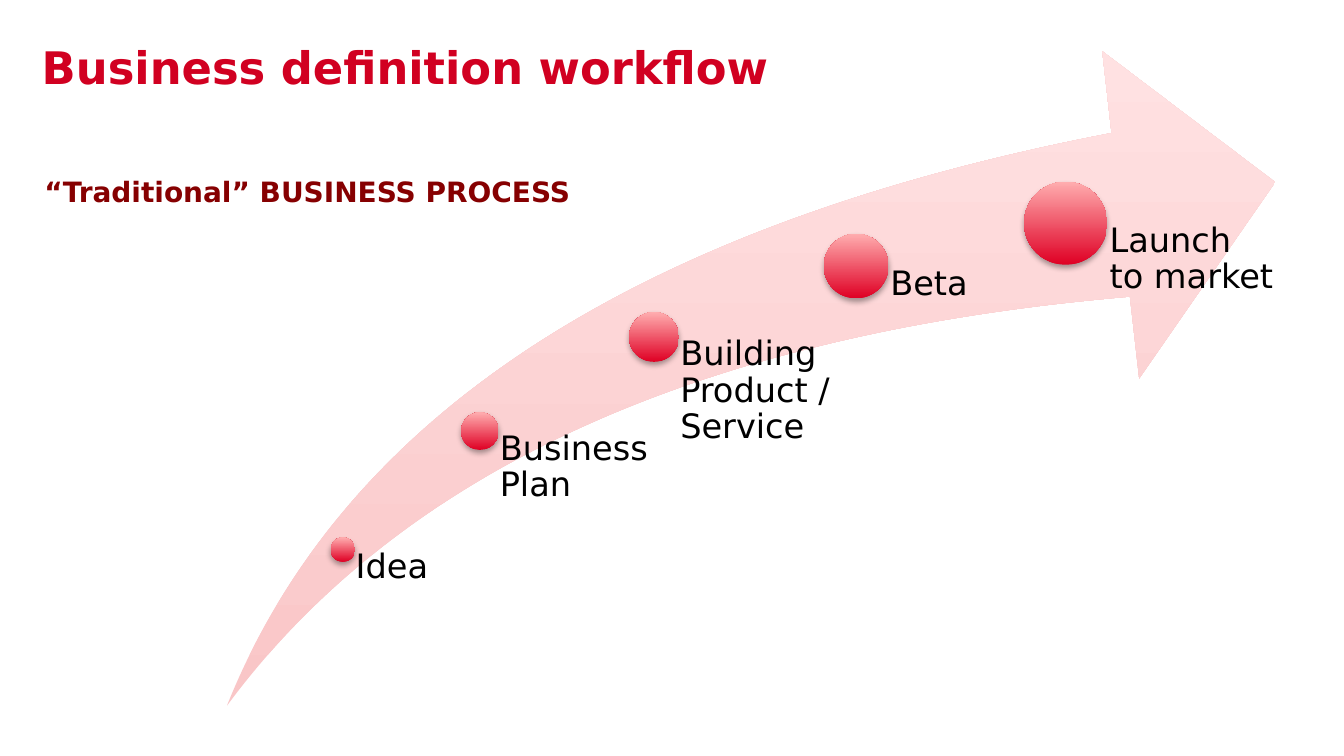
"""Build the business definition workflow slide."""
from lxml import etree
from pptx import Presentation
from pptx.dml.color import RGBColor
from pptx.enum import shapes, text
from pptx.oxml import ns
from pptx.util import Cm, Pt

RED = RGBColor(0xD1, 0x00, 0x21)
MAROON = RGBColor(0x86, 0x00, 0x01)
BLACK = RGBColor(0x00, 0x00, 0x00)
ARROW_COLOURS = RGBColor(0xF9, 0xC6, 0xC7), RGBColor(0xFF, 0xE1, 0xE2)
DOT_COLOURS = RGBColor(0xDF, 0x00, 0x24), RGBColor(0xFF, 0xAD, 0xAF)

HEADINGS = [
    ("“Traditional” BUSINESS PROCESS", (0.84, 3.3, 11.73, 0.71), MAROON, 15, 1.0),
    ("Business definition workflow", (0.79, 0.91, 15.72, 1.85), RED, 24, Pt(24.3)),
]
STAGES = [
    ("Idea", 6.48, 10.39, 0.46, 2.59),
    ("Business Plan", 9.07, 8.15, 0.71, 3.28),
    ("Building Product / Service", 12.36, 6.37, 0.94, 3.81),
    ("Beta", 16.18, 5.03, 1.22, 3.96),
    ("Launch to market", 20.14, 4.22, 1.57, 3.96),
]
ARROW_BOX = (4.29, 0.97, 19.81, 12.37)
ARROW_BOTTOM = ARROW_BOX[1] + ARROW_BOX[3]
INSET_RATIO = 0.53
SHADOW = {"blurRad": Pt(3.1), "dist": Pt(1.8), "dir": 5400000, "rotWithShape": 0}


def set_all(target, values):
    for name, value in values.items():
        setattr(target, name, value)


def add_words(slide, words, box, colour, size, spacing, bold=False, inset=0):
    frame = slide.shapes.add_textbox(*map(Cm, box)).text_frame
    set_all(frame, {
        "word_wrap": True, "auto_size": text.MSO_AUTO_SIZE.NONE,
        "vertical_anchor": text.MSO_ANCHOR.TOP, "margin_left": Cm(inset),
        "margin_top": 0, "margin_right": 0, "margin_bottom": 0,
    })
    paragraph = frame.paragraphs[0]
    paragraph.line_spacing = spacing
    run = paragraph.add_run()
    run.text = words
    set_all(run.font, {"name": "DejaVu Sans", "size": Pt(size), "bold": bold})
    run.font.color.rgb = colour


def add_gradient_shape(slide, kind, box, colours):
    shape = slide.shapes.add_shape(kind, *map(Cm, box))
    shape.shadow.inherit = False
    shape.line.fill.background()
    shape.fill.gradient()
    shape.fill.gradient_angle = 90
    for stop, colour, position in zip(shape.fill.gradient_stops, colours, (0, 1)):
        stop.color.rgb = colour
        stop.position = position
    return shape


def add_shadow(shape):
    effects = shape.element.spPr.find(ns.qn("a:effectLst"))
    shadow = etree.SubElement(effects, ns.qn("a:outerShdw"),
                              {name: str(value) for name, value in SHADOW.items()})
    black = etree.SubElement(shadow, ns.qn("a:srgbClr"), val=str(BLACK))
    etree.SubElement(black, ns.qn("a:alpha"), val="35000")


def main():
    deck = Presentation()
    set_all(deck, {"slide_width": Cm(25.4), "slide_height": Cm(14.29)})
    slide = deck.slides.add_slide(deck.slide_layouts[6])

    for words, box, colour, size, spacing in HEADINGS:
        add_words(slide, words, box, colour, size, spacing, bold=True)

    arrow = add_gradient_shape(slide, shapes.MSO_SHAPE.SWOOSH_ARROW, ARROW_BOX, ARROW_COLOURS)
    for index in range(2):
        arrow.adjustments[index] = 0.25

    for stage, x, y, diameter, width in STAGES:
        dot_box = (x - diameter / 2, y - diameter / 2, diameter, diameter)
        add_shadow(add_gradient_shape(slide, shapes.MSO_SHAPE.OVAL, dot_box, DOT_COLOURS))
        add_words(slide, stage, (x, y, width, ARROW_BOTTOM - y), BLACK, 18, 0.9,
                  inset=diameter * INSET_RATIO)

    deck.save("out.pptx")


if __name__ == "__main__":
    main()
